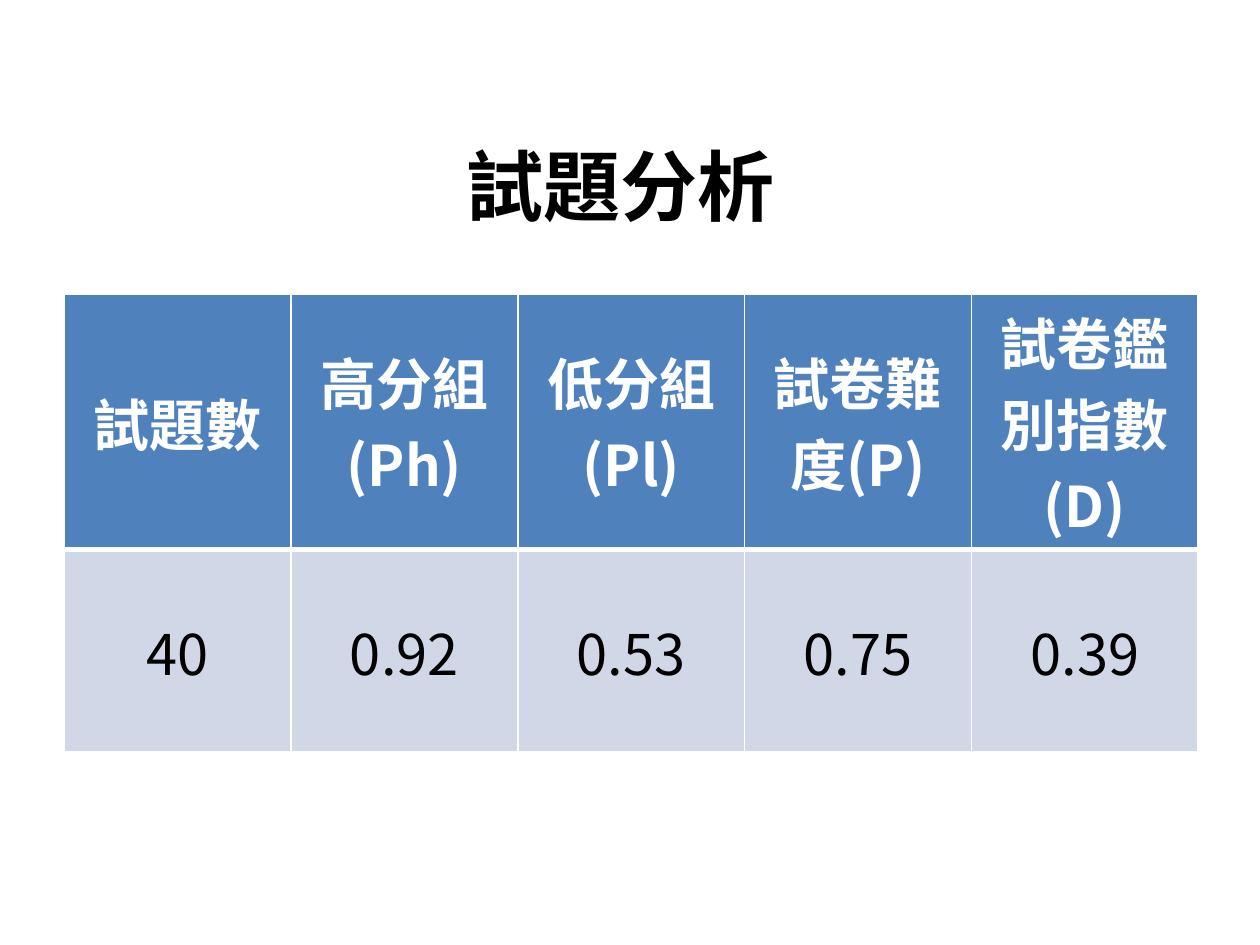
import lxml.etree
import pptx
import pptx.dml.color
import pptx.enum.text
import pptx.oxml.ns
import pptx.util

WIDTH, HEIGHT = 10, 7.5
TITLE_BOX = (0.043, 0.112, 0.9, 0.167)
TABLE_BOX = (0.051, 0.311, 0.9, 0.485)
HEADER_SHARE = 0.557
HEADERS = ["試題數", "高分組(Ph)", "低分組(Pl)", "試卷難度(P)", "試卷鑑別指數(D)"]
VALUES = ["40", "0.92", "0.53", "0.75", "0.39"]
THIN, THICK = 1, 3


def color(value):
    """Return the colour for a hex string."""
    return pptx.dml.color.RGBColor.from_string(value)


def place(box):
    """Turn shares of the slide into left, top, width and height."""
    return [pptx.util.Inches(share * side)
            for share, side in zip(box, (WIDTH, HEIGHT) * 2)]


def write(frame, text, *, size, font, ink, bold=False):
    """Write one centred paragraph into a text frame."""
    frame.word_wrap = True
    paragraph = frame.paragraphs[0]
    paragraph.alignment = pptx.enum.text.PP_ALIGN.CENTER
    run = paragraph.add_run()
    run.text = text
    run.font.size = pptx.util.Pt(size)
    run.font.bold = bold
    run.font.color.rgb = color(ink)
    run.font.name = font
    east_asian = lxml.etree.SubElement(run.font._element, pptx.oxml.ns.qn("a:ea"))
    east_asian.set("typeface", "Noto Sans CJK SC")


def set_borders(cell, top, bottom):
    """Give a cell white borders, with top and bottom widths in points."""
    properties = cell._tc.get_or_add_tcPr()
    for side, width in (("L", THIN), ("R", THIN), ("T", top), ("B", bottom)):
        line = lxml.etree.SubElement(properties, pptx.oxml.ns.qn(f"a:ln{side}"),
                                     w=str(pptx.util.Pt(width)))
        fill = lxml.etree.SubElement(line, pptx.oxml.ns.qn("a:solidFill"))
        lxml.etree.SubElement(fill, pptx.oxml.ns.qn("a:srgbClr"), val="FFFFFF")


def add_title(slide, box):
    """Add the slide title in the given box."""
    frame = slide.shapes.add_textbox(*place(box)).text_frame
    frame.vertical_anchor = pptx.enum.text.MSO_ANCHOR.MIDDLE
    write(frame, "試題分析", size=44, font="Calibri", ink="000000", bold=True)


def add_analysis_table(slide, box):
    """Add the table of item statistics in the given box."""
    left, top, width, height = place(box)
    table = slide.shapes.add_table(2, len(HEADERS), left, top, width, height).table
    for column in table.columns:
        column.width = width // len(HEADERS)
    table.rows[0].height = int(height * HEADER_SHARE)
    table.rows[1].height = height - table.rows[0].height
    styles = [(HEADERS, "4F81BD", "FFFFFF", True, THIN, THICK),
              (VALUES, "D0D8E8", "000000", False, THICK, THIN)]
    for row, (texts, fill, ink, bold, upper, lower) in enumerate(styles):
        for column, text in enumerate(texts):
            cell = table.cell(row, column)
            set_borders(cell, upper, lower)
            cell.fill.solid()
            cell.fill.fore_color.rgb = color(fill)
            cell.vertical_anchor = pptx.enum.text.MSO_ANCHOR.MIDDLE
            write(cell.text_frame, text, size=32, font="Noto Sans CJK SC",
                  ink=ink, bold=bold)


def main():
    """Build and save the presentation."""
    presentation = pptx.Presentation()
    presentation.slide_width = pptx.util.Inches(WIDTH)
    presentation.slide_height = pptx.util.Inches(HEIGHT)
    slide = presentation.slides.add_slide(presentation.slide_layouts[6])
    add_title(slide, TITLE_BOX)
    add_analysis_table(slide, TABLE_BOX)
    presentation.save("out.pptx")


if __name__ == "__main__":
    main()
